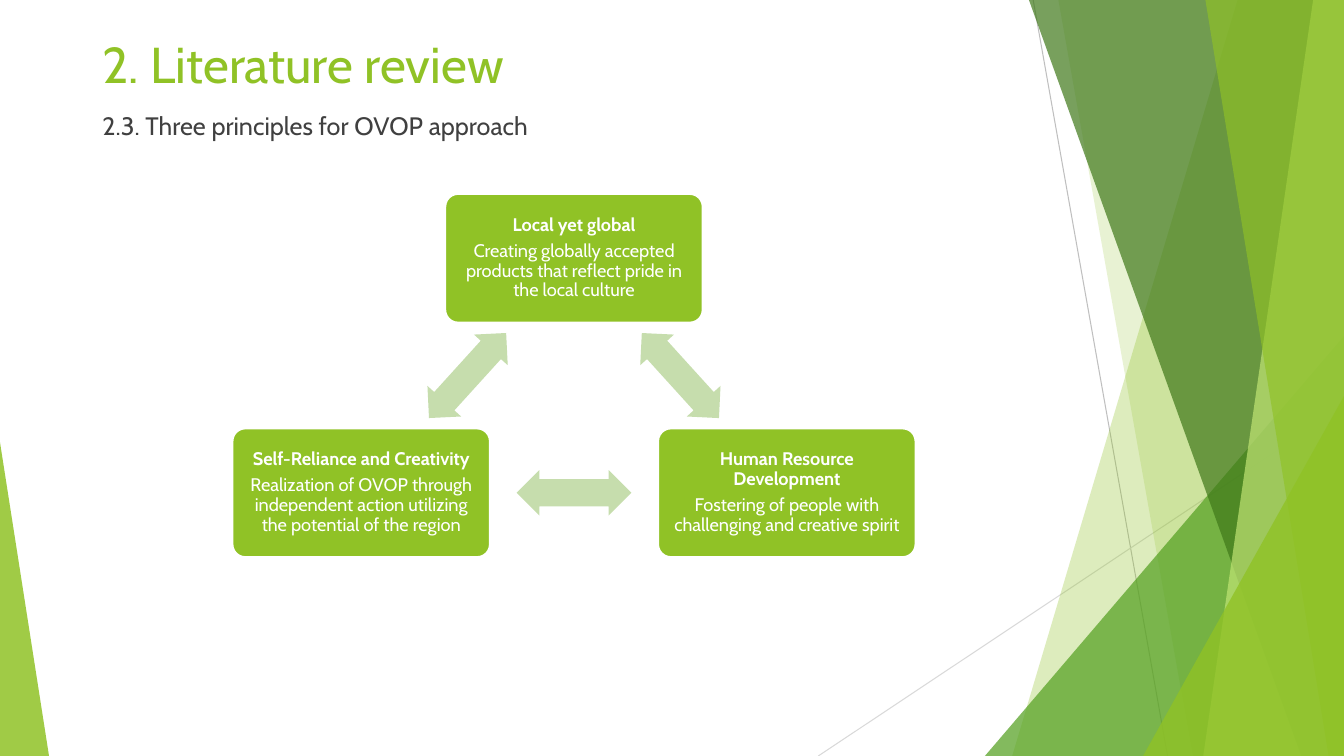
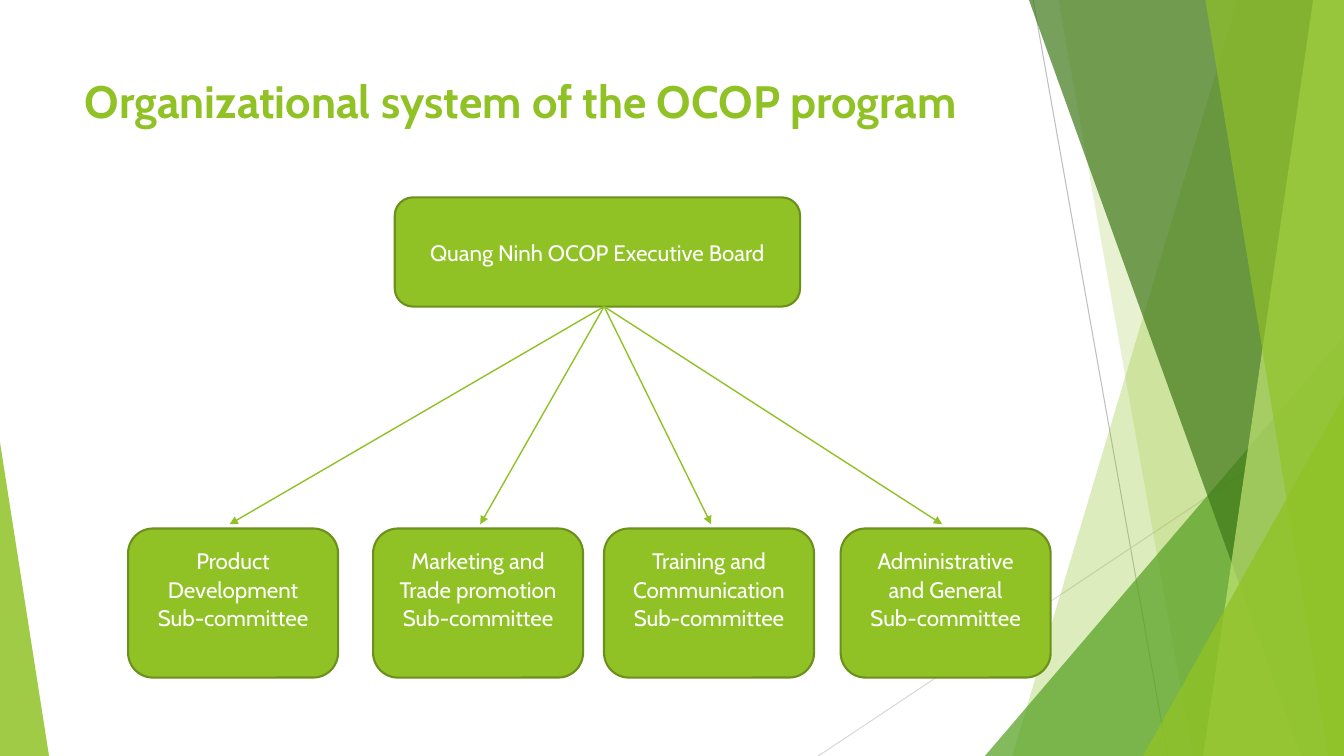
from math import atan2, degrees
from pptx import Presentation
from pptx.dml.color import RGBColor
from pptx.enum.shapes import MSO_CONNECTOR as CONN, MSO_SHAPE as SHAPE
from pptx.enum.text import MSO_ANCHOR as ANCHOR, MSO_AUTO_SIZE as FIT, PP_ALIGN as ALIGN
from pptx.oxml.ns import qn
from pptx.util import Pt
from lxml.etree import SubElement as Sub

WIDE, HIGH = 960, 540
FONT = "Cabin"
GREEN, EDGE, PALE = "90C226", "6B901C", "C6DDAD"
WHITE, INK = "FFFFFF", "404040"


def tint(code):
    return RGBColor.from_string(code)


def paint(shape, fill, line=None, width=1.5, alpha=None):
    """Fill, outline and opacity (percent) of a shape."""
    shape.shadow.inherit = False
    shape.fill.solid()
    shape.fill.fore_color.rgb = tint(fill)
    if alpha:
        color = shape.fill._xPr.find(qn("a:solidFill"))[0]
        Sub(color, qn("a:alpha")).set("val", str(alpha * 1000))
    if line:
        shape.line.color.rgb = tint(line)
        shape.line.width = Pt(width)
    else:
        shape.line.fill.background()


def block(slide, kind, box, *adjust):
    shape = slide.shapes.add_shape(kind, *map(Pt, box))
    for i, value in enumerate(adjust):
        shape.adjustments[i] = value
    return shape


def rule(slide, start, end, color, width, arrow=False):
    line = slide.shapes.add_connector(CONN.STRAIGHT, *map(Pt, start + end))
    line.line.color.rgb = tint(color)
    line.line.width = Pt(width)
    if arrow:
        Sub(line.line._ln, qn("a:tailEnd")).set("type", "triangle")
    Sub(line.element.spPr, qn("a:effectLst"))


def write(frame, lines, size, color, align=ALIGN.CENTER, space=1.0, after=0):
    """One paragraph per (text, bold) pair."""
    frame.word_wrap = True
    for i, (text, bold) in enumerate(lines):
        para = frame.add_paragraph() if i else frame.paragraphs[0]
        para.alignment, para.line_spacing = align, space
        para.space_before, para.space_after = Pt(0), Pt(after)
        run = para.add_run()
        run.text = text
        font = run.font
        font.name, font.size, font.bold = FONT, Pt(size), bold
        font.color.rgb = tint(color)


def holder(shape, box, text, size, color, bold=False):
    """Move and fill a title or body placeholder."""
    shape.left, shape.top, shape.width, shape.height = map(Pt, box)
    frame = shape.text_frame
    frame.auto_size, frame.vertical_anchor = FIT.NONE, ANCHOR.TOP
    write(frame, [(text, bold)], size, color, ALIGN.LEFT)


def decor(slide, master):
    """Draw the facets, then hand them to the master for every slide."""
    first = len(slide.shapes)
    rule(slide, (738, 0), (834, HIGH), "BFBFBF", 0.75)
    rule(slide, (WIDE, 290), (584.5, HIGH), "D9D9D9", 0.75)

    def band(top, foot, color, alpha):
        pen = slide.shapes.build_freeform(Pt(top), Pt(0))
        ends = [(WIDE, 0), (WIDE, HIGH), (foot, HIGH)]
        pen.add_line_segments([(Pt(x), Pt(y)) for x, y in ends])
        paint(pen.convert_to_shape(), color, alpha=alpha)

    def wedge(left, top, width, apex, color, alpha):
        box = (left, top, width, HIGH - top)
        paint(block(slide, SHAPE.ISOSCELES_TRIANGLE, box, apex), color, alpha=alpha)

    band(884, 723, GREEN, 30)
    band(756, 852, GREEN, 20)
    wedge(703.5, 240, 256.5, 1, "54A021", 72)
    band(735, 929.5, "3F7819", 70)
    band(938, 859.5, "C0E474", 70)
    band(861, 949, GREEN, 65)
    wedge(816.5, 283, 143.5, 1, GREEN, 80)
    wedge(0, 316, 35, 0, GREEN, 85)
    for i, shape in enumerate(list(slide.shapes)[first:]):
        shape.element.xpath(".//p:cNvPr")[0].set("id", str(100 + i))
        master.shapes.element.append(shape.element)


def cycle(slide, box, cards):
    """Three cards in a triangle, joined by double arrows."""
    left, top, width, height = box
    wide, high = 184, 92
    mid, low = left + width / 2, top + height - high / 2
    spots = [(mid, top + high / 2), (left + width - wide / 2, low), (left + wide / 2, low)]
    for i, ((x, y), (head, text)) in enumerate(zip(spots, cards)):
        card = block(slide, SHAPE.ROUNDED_RECTANGLE,
                     (x - wide / 2, y - high / 2, wide, high), 0.1)
        paint(card, GREEN, WHITE)
        frame = card.text_frame
        frame.margin_left = frame.margin_right = Pt(6)
        frame.margin_top = frame.margin_bottom = Pt(6)
        frame.vertical_anchor = ANCHOR.MIDDLE
        write(frame, [(head, True), (text, False)], 13, WHITE, space=0.9, after=4.5)
        # Arrow halfway to the next card
        nx, ny = spots[(i + 1) % 3]
        arrow = block(slide, SHAPE.LEFT_RIGHT_ARROW,
                      ((x + nx) / 2 - 41, (y + ny) / 2 - 16.25, 82, 32.5), 0.6, 0.5)
        arrow.rotation = degrees(atan2(ny - y, nx - x))
        paint(arrow, PALE)


def chart(slide, box, chief, teams):
    """A board on top, with arrows down to its teams."""
    left, top, width, height = box
    high = 106.5
    row = top + height - high

    def node(spot, lines, foot=3.6):
        shape = block(slide, SHAPE.ROUNDED_RECTANGLE, spot)
        paint(shape, GREEN, EDGE)
        frame = shape.text_frame
        frame.vertical_anchor, frame.margin_bottom = ANCHOR.MIDDLE, Pt(foot)
        write(frame, [(line, False) for line in lines], 16, WHITE, space=1.07)

    node((left + 190.5, top, 289.5, 78), [chief])
    for x, tip, name in teams:
        node((left + x, row, 150, high), [name, "Sub-committee"], 24.5)
    for x, tip, name in teams:
        rule(slide, (left + 340, top + 78), (left + tip, row - 3), GREEN, 1, True)


def main():
    deck = Presentation()
    deck.slide_width, deck.slide_height = Pt(WIDE), Pt(HIGH)

    # Three principles
    slide = deck.slides.add_slide(deck.slide_layouts[1])
    decor(slide, deck.slide_master)
    holder(slide.shapes.title, (66, 20, 828, 62), "2. Literature review", 36, GREEN)
    body = slide.placeholders[1]
    holder(body, (66, 75.5, 828, 410.5), "2.3. Three principles for OVOP approach", 18, INK)
    props = body.text_frame.paragraphs[0]._p.get_or_add_pPr()
    props.set("marL", "0")
    props.set("indent", "0")
    Sub(props, qn("a:buNone"))
    cycle(slide, (166, 138.5, 488, 259.5), [
        ("Local yet global",
         "Creating globally accepted products that reflect pride in the local culture"),
        ("Human Resource Development",
         "Fostering of people with challenging and creative spirit"),
        ("Self-Reliance and Creativity",
         "Realization of OVOP through independent action utilizing "
         "the potential of the region")])

    # Organization
    slide = deck.slides.add_slide(deck.slide_layouts[5])
    holder(slide.shapes.title, (53.5, 48.5, 677, 103.5),
           "Organizational system of the OCOP program", 32.4, GREEN, True)
    chart(slide, (91.5, 141, 659, 343), "Quang Ninh OCOP Executive Board", [
        (0, 72.5, "Product Development"),
        (175, 251.5, "Marketing and Trade promotion"),
        (340, 416.5, "Training and Communication"),
        (509, 581.5, "Administrative and General")])
    deck.save("out.pptx")


if __name__ == "__main__":
    main()
